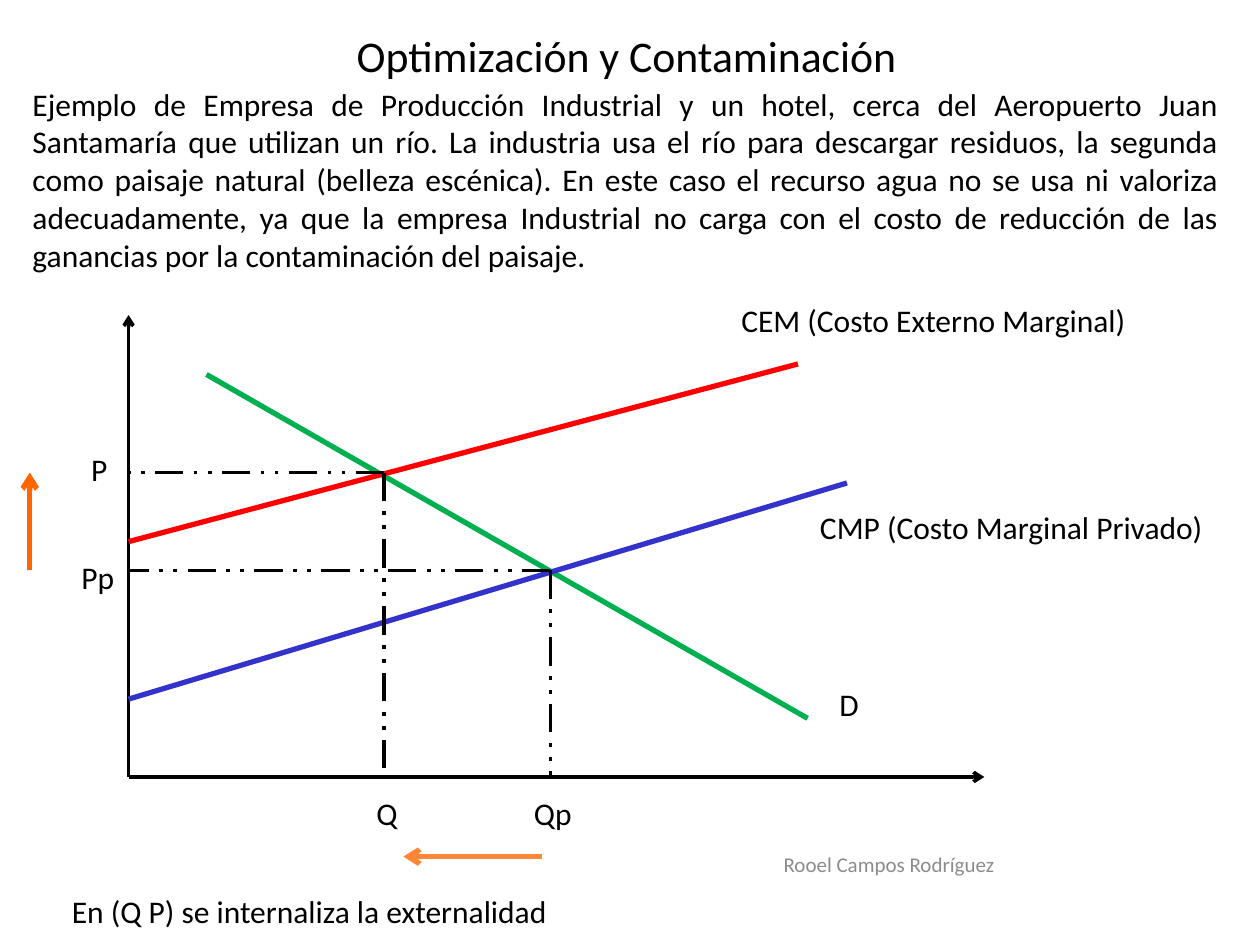
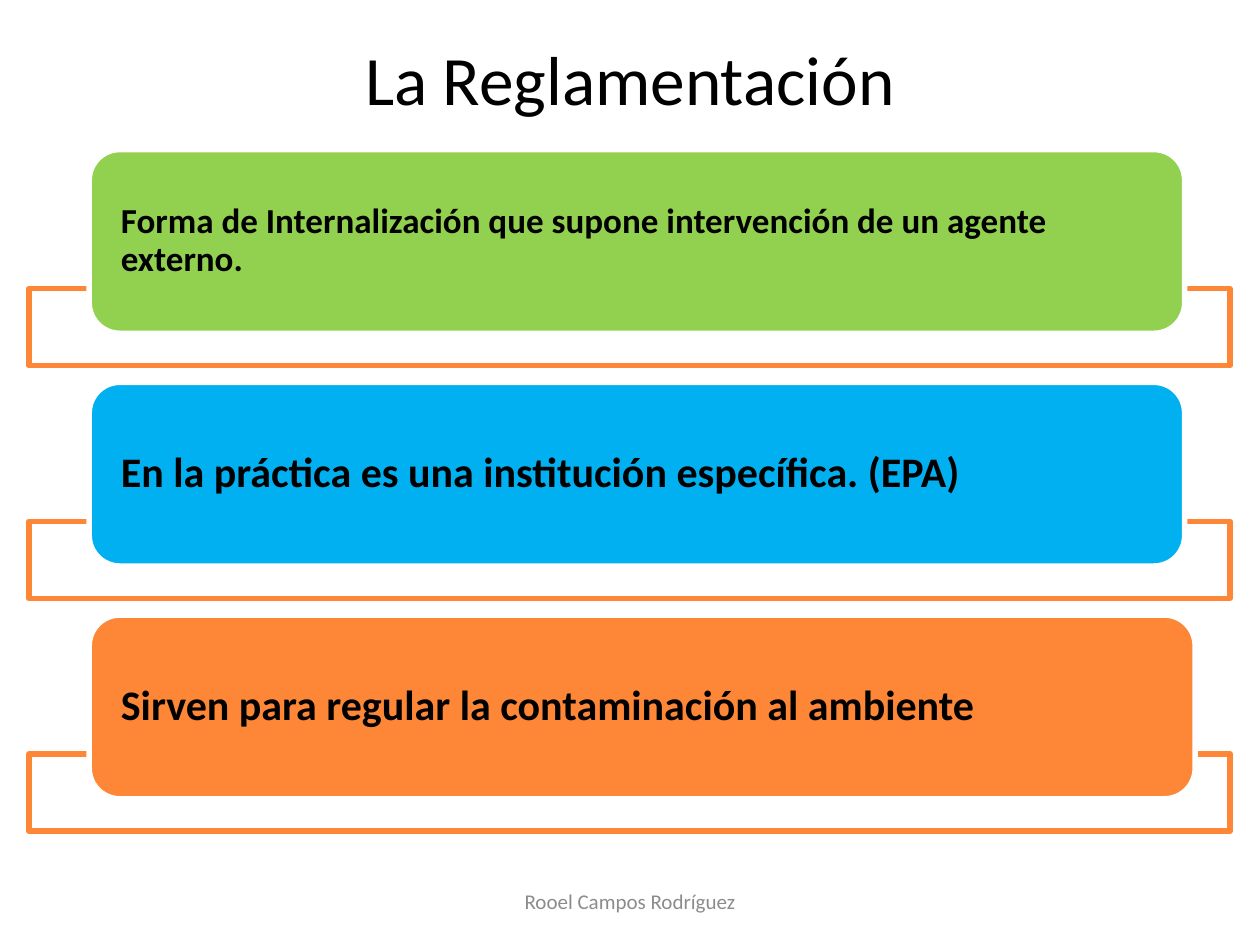
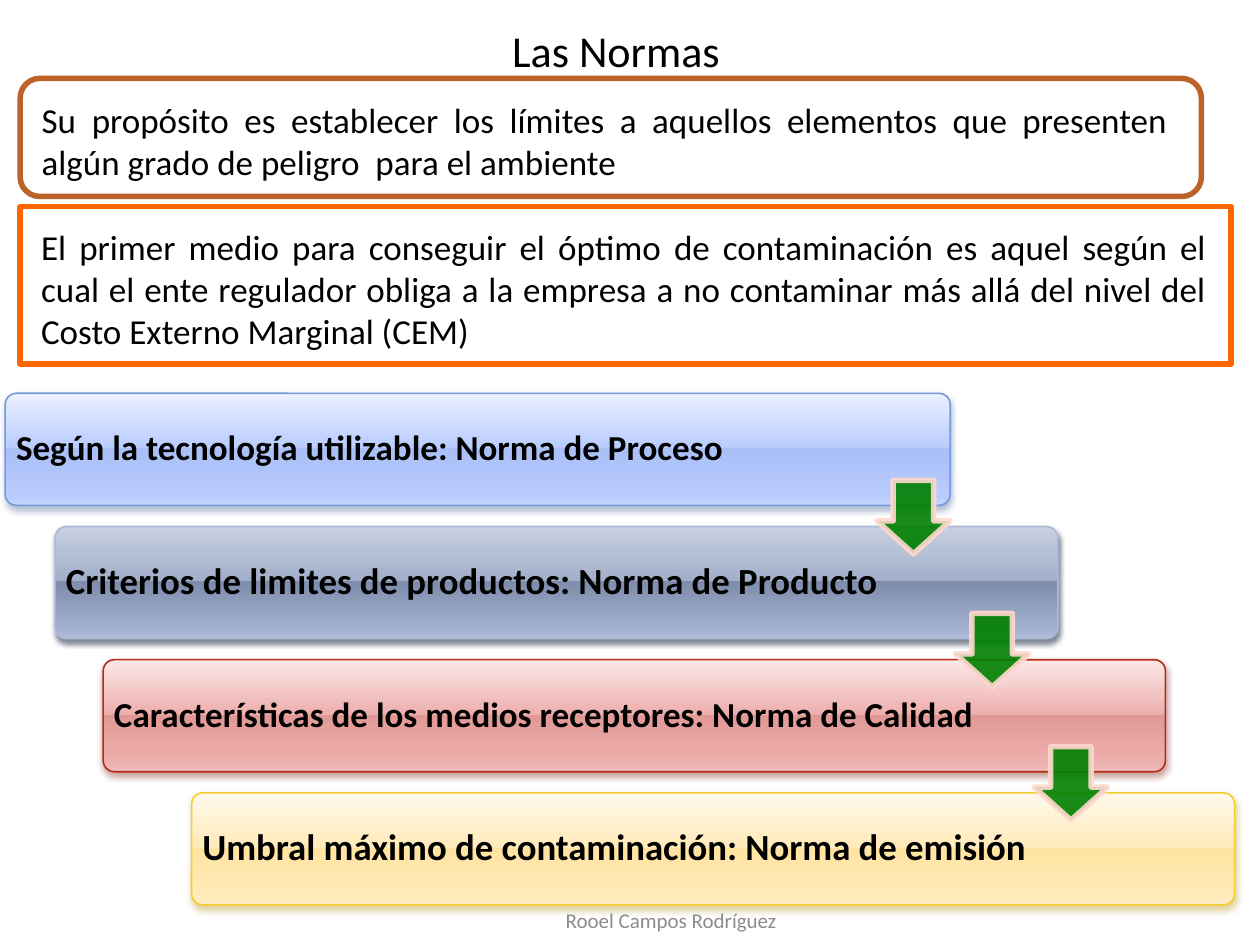
from lxml.etree import SubElement
from pptx import Presentation
from pptx.dml.color import RGBColor
from pptx.enum.dml import MSO_LINE
from pptx.enum.shapes import MSO_CONNECTOR, MSO_SHAPE
from pptx.enum.text import MSO_ANCHOR, PP_ALIGN
from pptx.oxml.ns import qn
from pptx.util import Pt

LEFT, MID, JUST = PP_ALIGN.LEFT, PP_ALIGN.CENTER, PP_ALIGN.JUSTIFY
TOP, CENTER = MSO_ANCHOR.TOP, MSO_ANCHOR.MIDDLE
RECT, ROUND = MSO_SHAPE.RECTANGLE, MSO_SHAPE.ROUNDED_RECTANGLE
DOWN, LINE = MSO_SHAPE.DOWN_ARROW, MSO_CONNECTOR.STRAIGHT
DASH = MSO_LINE.DASH_DOT_DOT

FONT = "Calibri"
BLACK = RGBColor(0x00, 0x00, 0x00)
WHITE = RGBColor(0xFF, 0xFF, 0xFF)
GRAY = RGBColor(0x8C, 0x8C, 0x8C)
ORANGE = RGBColor(0xFE, 0x86, 0x37)
BRIGHT = RGBColor(0xFF, 0x66, 0x00)
BROWN = RGBColor(0xBC, 0x63, 0x29)
LIME = RGBColor(0x92, 0xD0, 0x50)
SKY = RGBColor(0x00, 0xB0, 0xF0)
GREEN = RGBColor(0x00, 0xB0, 0x50)
RED = RGBColor(0xFF, 0x00, 0x00)
BLUE = RGBColor(0x33, 0x33, 0xCC)
LEAF = RGBColor(0x00, 0x80, 0x00)
PEACH = RGBColor(0xFF, 0xD9, 0xCE)
THICK = 3.15
STOPS = (0, 49, 49, 92, 100)


def write(frame, words, size=18, color=BLACK, bold=False, align=LEFT,
          anchor=TOP, pad=(7.2, 3.6, 7.2, 3.6), wrap=True, space=None):
    """Put formatted words in a text frame."""
    frame.word_wrap = wrap
    frame.vertical_anchor = anchor
    frame.margin_left, frame.margin_top, frame.margin_right, frame.margin_bottom = map(Pt, pad)
    para = frame.paragraphs[0]
    para.alignment = align
    para.line_spacing = space
    run = para.add_run()
    run.text = words
    font = run.font
    font.name, font.size, font.bold = FONT, Pt(size), bold
    font.color.rgb = color


def tint(parent, color, alpha):
    """Add a colour with an opacity in percent."""
    node = SubElement(parent, qn("a:srgbClr"), val=str(color))
    SubElement(node, qn("a:alpha"), val=str(alpha * 1000))


class Deck:
    """Hold the shared style and the current slide."""

    def __init__(self):
        """Start a deck of 10 by 7.5 inches."""
        self.prs = Presentation()
        self.prs.slide_width, self.prs.slide_height = Pt(720), Pt(540)

    def page(self, words, box, size):
        """Add a slide with its title."""
        self.slide = self.prs.slides.add_slide(self.prs.slide_layouts[5])
        title = self.slide.shapes.title
        title.left, title.top, title.width, title.height = map(Pt, box)
        write(title.text_frame, words, size, align=MID, anchor=CENTER)

    def label(self, words, box, **form):
        """Add a text box."""
        area = self.slide.shapes.add_textbox(*map(Pt, box))
        write(area.text_frame, words, **form)

    def credit(self, left, top):
        """Add the footer with the author's name."""
        self.label("Rooel Campos Rodríguez", (left, top, 228, 29), size=12,
                   color=GRAY, align=MID, anchor=CENTER)

    def line(self, start, end, color=BLACK, width=2, dash=None, arrow=False):
        """Draw a straight line or arrow."""
        link = self.slide.shapes.add_connector(LINE, *map(Pt, start + end))
        link.line.color.rgb = color
        link.line.width = Pt(width)
        if dash:
            link.line.dash_style = dash
        if arrow:
            SubElement(link.line._get_or_add_ln(), qn("a:tailEnd"), type="arrow")
        SubElement(link._element.spPr, qn("a:effectLst"))

    def shape(self, kind, box, edge, width=THICK, fill=None, adjust=()):
        """Add a preset shape without shadow."""
        item = self.slide.shapes.add_shape(kind, *map(Pt, box))
        item.shadow.inherit = False
        for i, value in enumerate(adjust):
            item.adjustments[i] = value
        if fill is None:
            item.fill.background()
        else:
            item.fill.solid()
            item.fill.fore_color.rgb = fill
        item.line.color.rgb = edge
        item.line.width = Pt(width)
        return item

    def glossy(self, box, edge, shades, glow):
        """Add a rounded bar with a gradient and a soft shadow."""
        item = self.shape(ROUND, box, edge, 0.9, adjust=[0.1])
        item.fill.gradient()
        item.fill.gradient_angle = 270
        props = item._element.spPr
        stops = props.find(".//" + qn("a:gsLst"))
        for old in list(stops):
            stops.remove(old)
        for place, shade in zip(STOPS, shades.split()):
            tint(SubElement(stops, qn("a:gs"), pos=str(place * 1000)), shade, 100)
        color, alpha, blur = glow
        cast = SubElement(props.find(qn("a:effectLst")), qn("a:outerShdw"),
                          blurRad=str(Pt(blur)), dist=str(Pt(2)), dir="5400000",
                          rotWithShape="0")
        tint(cast, color, alpha)
        return item

    def arrow(self, left, top):
        """Add a translucent down arrow."""
        item = self.shape(DOWN, (left, top, 42, 42), PEACH, fill=LEAF, adjust=(0.55, 0.45))
        for node in item._element.spPr.iter(qn("a:srgbClr")):
            SubElement(node, qn("a:alpha"), val="90000")


def market(deck):
    """Build the slide on the optimum and pollution."""
    deck.page("Optimización y Contaminación", (34, 11.5, 648, 40), 25)
    deck.label("Ejemplo de Empresa de Producción Industrial y un hotel, cerca del "
               "Aeropuerto Juan Santamaría que utilizan un río. La industria usa el río "
               "para descargar residuos, la segunda como paisaje natural (belleza "
               "escénica). En este caso el recurso agua no se usa ni valoriza "
               "adecuadamente, ya que la empresa Industrial no carga con el costo de "
               "reducción de las ganancias por la contaminación del paisaje.",
               (11.5, 44.8, 692, 117), align=JUST)
    left, base = 73.5, 444
    deck.line((left, base), (left, 180), arrow=True)
    deck.line((left, base), (562.5, base), arrow=True)
    deck.line((118, 214), (461.5, 410.5), GREEN, 3)
    deck.line((left, 309.5), (456, 208), RED, 3)
    deck.line((left, 399.5), (484, 276), BLUE, 3)
    for x, y in ((219.5, 270), (314.5, 326)):
        deck.line((x, y), (x, base), dash=DASH)
        deck.line((x, y), (left, y), dash=DASH)
    names = (("D", 472.5, 388, 26), ("CMP (Costo Marginal Privado)", 461.5, 286.5, 235.5),
             ("Qp", 298, 450, 37), ("Q", 208, 450, 27), ("Pp", 39.5, 315.5, 33),
             ("P", 45, 253.5, 24), ("CEM (Costo Externo Marginal)", 416.5, 168.5, 237))
    for words, x, y, width in names:
        deck.label(words, (x, y, width, 29), wrap=False)
    deck.label("En (Q P) se internaliza la externalidad", (34, 506, 382, 29))
    deck.line((17, 326), (17, 270), BRIGHT, 3, arrow=True)
    deck.line((309.5, 489.5), (230.5, 489.5), ORANGE, 3, arrow=True)
    deck.credit(394, 479.5)


def rules(deck):
    """Build the slide on regulation."""
    deck.page("La Reglamentación", (36, 21.5, 648, 46), 39.6)
    rows = (("Forma de Internalización que supone intervención de un agente externo.",
             20, LIME, 626),
            ("En la práctica es una institución específica. (EPA)", 24, SKY, 626),
            ("Sirven para regular la contaminación al ambiente", 24, ORANGE, 632))
    for i, (words, size, color, width) in enumerate(rows):
        drop = 133 * i
        deck.shape(RECT, (16.5, 165 + drop, 686.5, 44), ORANGE, fill=WHITE)
        card = deck.shape(ROUND, (51, 85.5 + drop, width, 105), WHITE, fill=color)
        write(card.text_frame, words, size, bold=True, anchor=CENTER,
              pad=(13, 0, 13, 0), space=0.9)
    deck.credit(246, 500.5)


def norms(deck):
    """Build the slide on the kinds of norm."""
    deck.page("Las Normas", (28, 11.5, 648, 34), 25.2)
    notes = ((ROUND, (11.5, 44.8, 675, 67.5), BROWN, (9, 3.6, 16, 0),
              "Su propósito es establecer los límites a aquellos elementos que "
              "presenten algún grado de peligro  para el ambiente"),
             (RECT, (11.5, 118, 692, 90), BRIGHT, (12, 3.6, 14, 0),
              "El primer medio para conseguir el óptimo de contaminación es aquel "
              "según el cual el ente regulador obliga a la empresa a no contaminar más "
              "allá del nivel del Costo Externo Marginal (CEM)"))
    for kind, box, edge, pad, words in notes:
        note = deck.shape(kind, box, edge)
        write(note.text_frame, words, 20, align=JUST, anchor=CENTER, pad=pad)
    steps = (("Según la tecnología utilizable: Norma de Proceso", 20, 3, 540,
              RGBColor(0x75, 0x98, 0xD9), "EBF1FF B8CCFF A9BFF6 B8CCFF C5D5FD",
              ("37568F", 38, 4)),
             ("Criterios de limites de productos: Norma de Producto", 21, 31.5, 573,
              RGBColor(0xAE, 0xBA, 0xD5), "C7CFE1 A3AFC9 7F8DAC A3B1D1 B1BEDB",
              ("6B7384", 83, 3.1)),
             ("Características de los medios receptores: Norma de Calidad", 20, 59, 607,
              RGBColor(0xB3, 0x2C, 0x16), "FBE8E8 EDAFAD E19996 EDAFAD EEBEBC",
              ("771100", 38, 4)),
             ("Umbral máximo de contaminación: Norma de emisión", 21, 109.5, 596,
              RGBColor(0xF5, 0xCD, 0x2D), "FFF9EC FFEAB9 FFE3A0 FFEAB9 FFEDC5",
              ("AC8900", 38, 4)))
    pitch = 76.1
    for i, (words, size, left, width, edge, shades, glow) in enumerate(steps):
        bar = deck.glossy((left, 224.8 + pitch * i, width, 64), edge, shades, glow)
        write(bar.text_frame, words, size, bold=True, anchor=CENTER,
              pad=(4.3, 4, 4.3, 4), space=0.9)
    for i in range(len(steps) - 1):
        deck.arrow(501 + 45 * i, 274.5 + pitch * i)
    deck.credit(269.5, 511)


def main():
    """Build and save the deck."""
    deck = Deck()
    market(deck)
    rules(deck)
    norms(deck)
    deck.prs.save("out.pptx")


if __name__ == "__main__":
    main()
